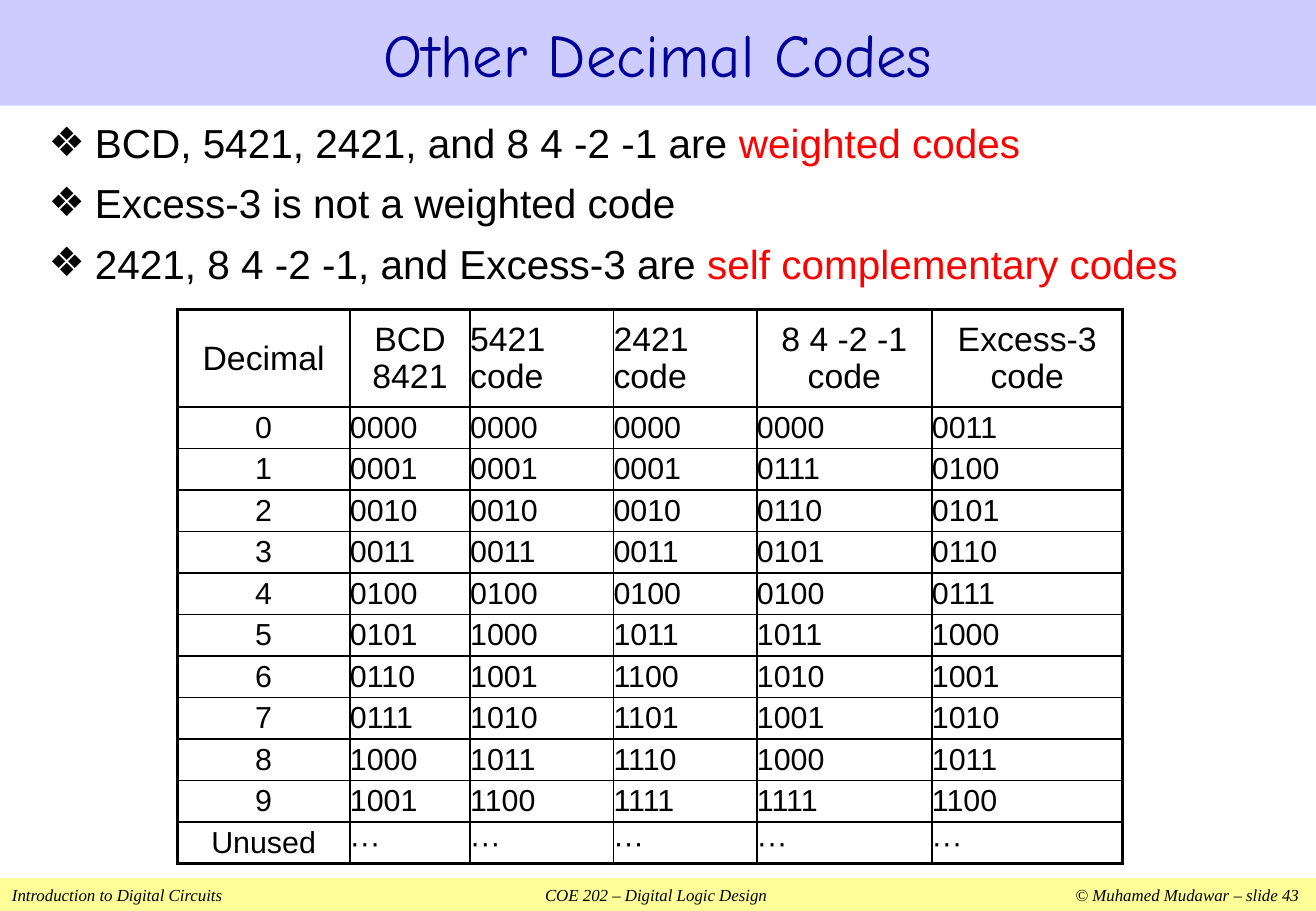
import pptx
import pptx.dml.color
import pptx.enum.shapes
import pptx.enum.text
import pptx.oxml
import pptx.oxml.ns
import pptx.util
from lxml import etree

Inches = pptx.util.Inches
Pt = pptx.util.Pt
ALIGN = pptx.enum.text.PP_ALIGN
MIDDLE = pptx.enum.text.MSO_ANCHOR.MIDDLE
qn = pptx.oxml.ns.qn

COLORS = {"black": "000000", "red": "FF0000", "navy": "000099",
          "lavender": "CCCCFF", "yellow": "FFFF99"}
FOOTER = "Introduction to Digital Circuits\tCOE 202 – Digital Logic Design\t© Muhamed Mudawar – slide 43"
POINTS = [
    [("BCD, 5421, 2421, and 8 4 -2 -1 are ", "black"), ("weighted codes", "red")],
    [("Excess-3 is not a weighted code", "black")],
    [("2421, 8 4 -2 -1, and Excess-3 are ", "black"), ("self complementary codes", "red")],
]
COLUMN_WIDTHS = [1.42, 0.99, 1.18, 1.18, 1.44, 1.57]
TABLE_HEIGHT = 4.56
HEADER_HEIGHT = 0.8
CENTERED_HEADERS = {0, 1, 4, 5}
CODES = [
    ["Decimal", "BCD\n8421", "5421\ncode", "2421\ncode", "8 4 -2 -1\ncode", "Excess-3\ncode"],
    ["0", "0000", "0000", "0000", "0000", "0011"],
    ["1", "0001", "0001", "0001", "0111", "0100"],
    ["2", "0010", "0010", "0010", "0110", "0101"],
    ["3", "0011", "0011", "0011", "0101", "0110"],
    ["4", "0100", "0100", "0100", "0100", "0111"],
    ["5", "0101", "1000", "1011", "1011", "1000"],
    ["6", "0110", "1001", "1100", "1010", "1001"],
    ["7", "0111", "1010", "1101", "1001", "1010"],
    ["8", "1000", "1011", "1110", "1000", "1011"],
    ["9", "1001", "1100", "1111", "1111", "1100"],
    ["Unused", "···", "···", "···", "···", "···"],
]


def rgb(name):
    return pptx.dml.color.RGBColor.from_string(COLORS[name])


def set_font(font, name, size, color="black"):
    font.name = name
    font.size = Pt(size)
    font.color.rgb = rgb(color)


def place(shape, left, top, width, height):
    shape.left, shape.top = Inches(left), Inches(top)
    shape.width, shape.height = Inches(width), Inches(height)


def fill_shape(shape, color):
    shape.fill.solid()
    shape.fill.fore_color.rgb = rgb(color)


def add_footer(page):
    bar = page.shapes.add_shape(pptx.enum.shapes.MSO_SHAPE.RECTANGLE, Inches(0),
                                Inches(7.23), Inches(10.83), Inches(0.27))
    fill_shape(bar, "yellow")
    bar.line.fill.background()
    bar.shadow.inherit = False
    bar.text_frame.vertical_anchor = MIDDLE
    para = bar.text_frame.paragraphs[0]
    para.add_run().text = FOOTER
    para.alignment = ALIGN.LEFT
    set_font(para.font, "Times New Roman", 10)
    para.font.italic = True
    stops = etree.Element(qn("a:tabLst"))
    for position, kind in [(5.3, "ctr"), (10.59, "r")]:
        etree.SubElement(stops, qn("a:tab"), pos=str(Inches(position)), algn=kind)
    para._p.get_or_add_pPr().insert(0, stops)


def add_title(page):
    title = page.shapes.title
    place(title, 0, 0, 10.83, 0.87)
    fill_shape(title, "lavender")
    title.text_frame.text = "Other Decimal Codes"
    title.text_frame.vertical_anchor = MIDDLE
    para = title.text_frame.paragraphs[0]
    para.alignment = ALIGN.CENTER
    set_font(para.font, "Comic Neue", 36, "navy")


def add_points(page):
    body = page.placeholders[1]
    place(body, 0.3, 0.92, 10.37, 1.51)
    frame = body.text_frame
    frame.auto_size = pptx.enum.text.MSO_AUTO_SIZE.NONE
    for index, spans in enumerate(POINTS):
        para = frame.add_paragraph() if index else frame.paragraphs[0]
        para.space_before = Pt(7)
        para.font.name = "Arial"
        para.font.size = Pt(24)
        for text, color in spans:
            span = para.add_run()
            span.text = text
            span.font.color.rgb = rgb(color)
        properties = para._p.get_or_add_pPr()
        properties.set("marL", str(Inches(0.38)))
        properties.set("indent", str(-Inches(0.38)))
        bullet = etree.Element(qn("a:buChar"), char="❖")
        properties.find(qn("a:spcBef")).addnext(bullet)


def set_borders(cell, widths):
    properties = cell._tc.get_or_add_tcPr()
    for side, width in widths.items():
        line = etree.SubElement(properties, qn(f"a:ln{side}"), w=str(Pt(width)))
        fill = etree.SubElement(line, qn("a:solidFill"))
        etree.SubElement(fill, qn("a:srgbClr"), val=COLORS["black"])


def format_cell(cell, text, size, centered):
    cell.text = text
    cell.vertical_anchor = MIDDLE
    cell.margin_left = cell.margin_right = cell.margin_top = cell.margin_bottom = 0
    cell.fill.background()
    for para in cell.text_frame.paragraphs:
        para.alignment = ALIGN.CENTER if centered else ALIGN.LEFT
        set_font(para.font, "Arial", size)


def add_code_table(page):
    last_row, last_column = len(CODES) - 1, len(COLUMN_WIDTHS) - 1
    table = page.shapes.add_table(len(CODES), len(COLUMN_WIDTHS), Inches(1.46), Inches(2.55),
                                  Inches(sum(COLUMN_WIDTHS)), Inches(TABLE_HEIGHT)).table
    table.first_row = table.horz_banding = False
    for column, width in zip(table.columns, COLUMN_WIDTHS):
        column.width = Inches(width)
    for r, texts in enumerate(CODES):
        row_height = (TABLE_HEIGHT - HEADER_HEIGHT) / last_row if r else HEADER_HEIGHT
        table.rows[r].height = Inches(row_height)
        for c, text in enumerate(texts):
            cell = table.cell(r, c)
            edges = {"L": c == 0, "R": c == last_column, "T": r == 0, "B": r == last_row}
            set_borders(cell, {side: 2.25 if outer else 1 for side, outer in edges.items()})
            centered = c == 0 if r else c in CENTERED_HEADERS
            format_cell(cell, text, 18 if r else 20, centered)


def main():
    """Build the slide on decimal codes."""
    deck = pptx.Presentation()
    deck.slide_width, deck.slide_height = Inches(10.83), Inches(7.5)
    page = deck.slides.add_slide(deck.slide_layouts[1])
    add_footer(page)
    add_title(page)
    add_points(page)
    add_code_table(page)
    deck.save("out.pptx")


if __name__ == "__main__":
    main()
